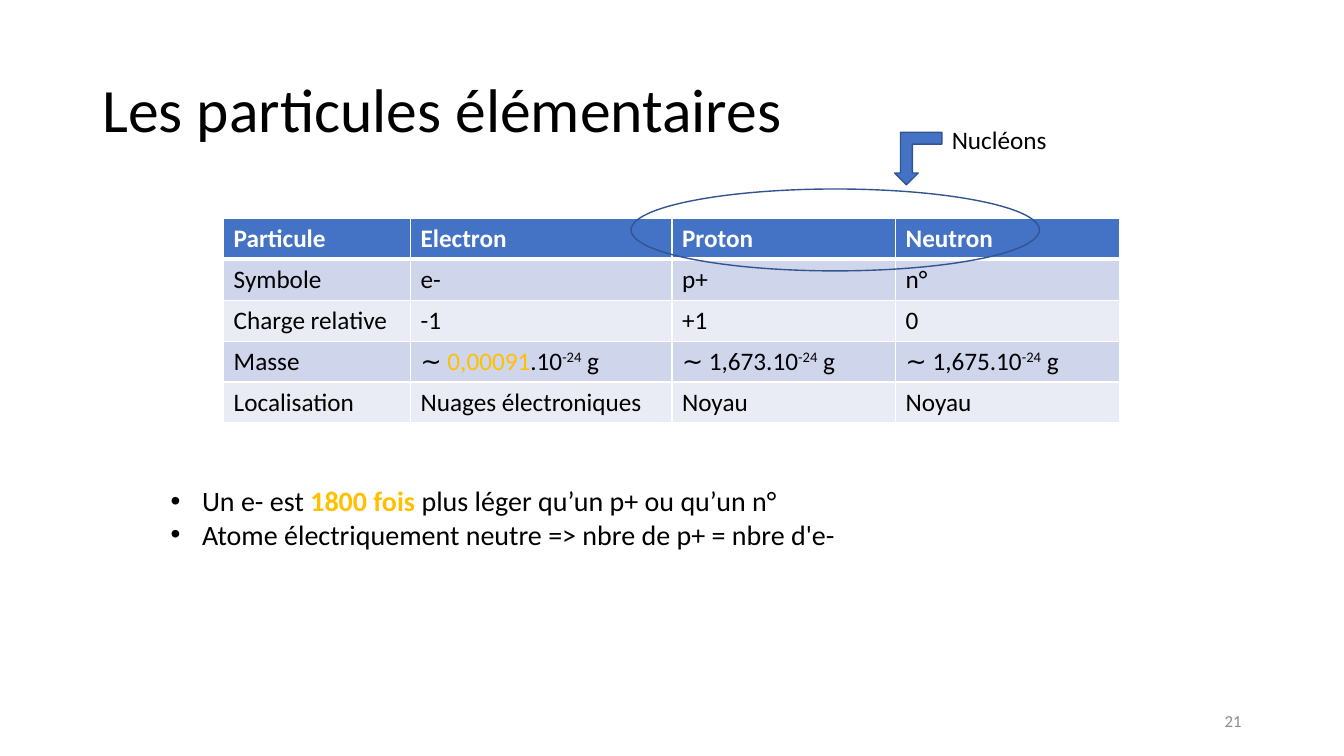
from dataclasses import dataclass

import pptx
import pptx.dml.color
import pptx.enum.shapes
import pptx.enum.text
import pptx.oxml
import pptx.oxml.ns
import pptx.util

Color = pptx.dml.color.RGBColor
Align = pptx.enum.text.PP_ALIGN
Anchor = pptx.enum.text.MSO_ANCHOR
Kind = pptx.enum.shapes.MSO_SHAPE

PX = 9525  # EMU, 96 px to the inch
FONT = "Calibri"
BLACK = Color(0, 0, 0)
WHITE = Color(255, 255, 255)
GOLD = Color(0xFF, 0xC0, 0x00)
GRAY = Color(0x8C, 0x8C, 0x8C)
BLUE = Color(0x44, 0x72, 0xC4)
NAVY = Color(0x32, 0x54, 0x91)
BANDS = (Color(0xE9, 0xEB, 0xF5), Color(0xCF, 0xD5, 0xEA))


@dataclass(frozen=True)
class Run:
    text: str
    color: Color = BLACK
    bold: bool = False
    raised: bool = False


@dataclass(frozen=True)
class Box:
    left: int
    top: int
    width: int
    height: int

    def emu(self) -> tuple[int, ...]:
        return tuple(n * PX for n in (self.left, self.top, self.width, self.height))


@dataclass(frozen=True)
class Label:
    box: Box
    lines: list[list[Run]]
    size: int
    align: Align = Align.LEFT
    anchor: Anchor = Anchor.TOP
    bullet: bool = False


@dataclass(frozen=True)
class Mark:
    kind: Kind
    box: Box
    fill: Color | None = None
    turn: int = 0


def mass(*lead: Run) -> list[Run]:
    """Runs of a mass in units of 10 to the power -24 g."""
    return [Run("∼ "), *lead, Run(".10"), Run("-24", raised=True), Run(" g")]


TITLE = Box(88, 38, 1104, 139)
GRID = Box(213, 208, 853, 195)
COLS = (178, 249, 213, 213)
ROWS = [
    [[Run(name, WHITE, True)] for name in ("Particule", "Electron", "Proton", "Neutron")],
    [[Run(text)] for text in ("Symbole", "e-", "p+", "n°")],
    [[Run(text)] for text in ("Charge relative", "-1", "+1", "0")],
    [[Run("Masse")], mass(Run("0,00091", GOLD)), mass(Run("1,673")), mass(Run("1,675"))],
    [[Run(text)] for text in ("Localisation", "Nuages électroniques", "Noyau", "Noyau")],
]
MARKS = [
    Mark(Kind.OVAL, Box(601, 180, 389, 78)),
    Mark(Kind.BENT_UP_ARROW, Box(852, 126, 45, 50), BLUE, 180),
]
LABELS = [
    Label(Box(897, 114, 146, 39), [[Run("Nucléons")]], 18),
    Label(
        Box(153, 456, 1008, 74),
        [
            [Run("Un e- est "), Run("1800 fois ", GOLD, True),
             Run("plus léger qu’un p+ ou qu’un n°")],
            [Run("Atome électriquement neutre => nbre de p+ = nbre d'e-")],
        ],
        20, bullet=True,
    ),
    Label(Box(904, 667, 288, 38), [[Run("21", GRAY)]], 12, Align.RIGHT, Anchor.MIDDLE),
]


def write(para, runs: list[Run], size: int) -> None:
    for item in runs:
        run = para.add_run()
        run.text = item.text
        font = run.font
        font.name, font.size, font.bold = FONT, pptx.util.Pt(size), item.bold
        font.color.rgb = item.color
        if item.raised:
            run._r.get_or_add_rPr().set("baseline", "30000")


def add_dot(para) -> None:
    props = para._p.get_or_add_pPr()
    props.set("marL", str(30 * PX))
    props.set("indent", str(-30 * PX))
    space = pptx.oxml.ns.nsdecls("a")
    props.append(pptx.oxml.parse_xml(f'<a:buFont {space} typeface="Arial"/>'))
    props.append(pptx.oxml.parse_xml(f'<a:buChar {space} char="•"/>'))


def add_title(slide) -> None:
    title = slide.shapes.title
    title.left, title.top, title.width, title.height = TITLE.emu()
    frame = title.text_frame
    frame.auto_size = pptx.enum.text.MSO_AUTO_SIZE.NONE
    frame.vertical_anchor = Anchor.MIDDLE
    para = frame.paragraphs[0]
    para.alignment, para.line_spacing = Align.LEFT, 0.9
    write(para, [Run("Les particules élémentaires")], 44)


def add_edges(cell, base: int) -> None:
    """White borders, the bottom one base points wide."""
    props = cell._tc.get_or_add_tcPr()
    for side, width in (("L", 1), ("R", 1), ("T", 1), ("B", base)):
        props.append(pptx.oxml.parse_xml(
            f'<a:ln{side} {pptx.oxml.ns.nsdecls("a")} w="{pptx.util.Pt(width)}">'
            f'<a:solidFill><a:srgbClr val="{WHITE}"/></a:solidFill></a:ln{side}>'))


def add_grid(slide) -> None:
    table = slide.shapes.add_table(len(ROWS), len(COLS), *GRID.emu()).table
    for col, width in zip(table.columns, COLS):
        col.width = width * PX
    for i, row in enumerate(ROWS):
        for j, runs in enumerate(row):
            cell = table.cell(i, j)
            add_edges(cell, 1 if i else 3)
            cell.fill.solid()
            cell.fill.fore_color.rgb = BANDS[i % 2] if i else BLUE
            write(cell.text_frame.paragraphs[0], runs, 18)


def add_mark(slide, mark: Mark) -> None:
    shape = slide.shapes.add_shape(mark.kind, *mark.box.emu())
    shape.shadow.inherit = False
    shape.rotation = mark.turn
    shape.line.color.rgb = NAVY
    shape.line.width = pptx.util.Pt(1)
    if mark.fill is None:
        shape.fill.background()
    else:
        shape.fill.solid()
        shape.fill.fore_color.rgb = mark.fill


def add_label(slide, label: Label) -> None:
    frame = slide.shapes.add_textbox(*label.box.emu()).text_frame
    frame.word_wrap = True
    frame.vertical_anchor = label.anchor
    for i, runs in enumerate(label.lines):
        para = frame.add_paragraph() if i else frame.paragraphs[0]
        para.alignment = label.align
        if label.bullet:
            add_dot(para)
        write(para, runs, label.size)


def main() -> None:
    deck = pptx.Presentation()
    deck.slide_width, deck.slide_height = 1280 * PX, 720 * PX
    slide = deck.slides.add_slide(deck.slide_layouts.get_by_name("Title Only"))
    add_title(slide)
    add_grid(slide)
    for mark in MARKS:
        add_mark(slide, mark)
    for label in LABELS:
        add_label(slide, label)
    deck.save("out.pptx")


if __name__ == "__main__":
    main()
